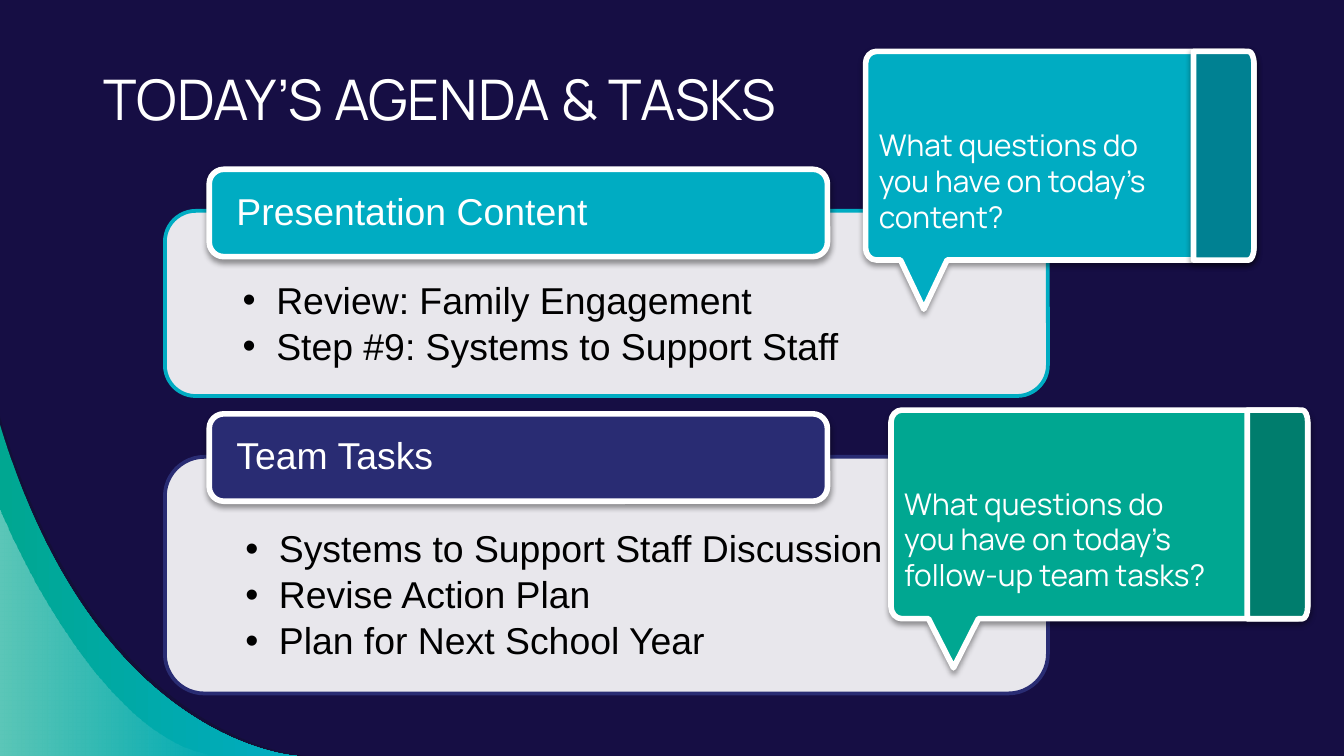
"""Build the agenda slide: two topic cards, two question callouts and a corner swoosh."""
from lxml import etree
from pptx import Presentation
from pptx.dml.color import RGBColor
from pptx.enum.shapes import MSO_SHAPE
from pptx.enum.text import MSO_ANCHOR, MSO_AUTO_SIZE, PP_ALIGN
from pptx.oxml.ns import qn
from pptx.util import Inches, Pt

ROUNDED = MSO_SHAPE.ROUNDED_RECTANGLE
TOP, MIDDLE, LEFT = MSO_ANCHOR.TOP, MSO_ANCHOR.MIDDLE, PP_ALIGN.LEFT
FIXED = MSO_AUTO_SIZE.NONE

NIGHT = RGBColor(0x16, 0x0E, 0x44)
SHADE = RGBColor(0x12, 0x10, 0x2F)
WHITE = RGBColor(0xFF, 0xFF, 0xFF)
BLACK = RGBColor(0, 0, 0)
TEAL = RGBColor(0x00, 0xAC, 0xC2)
DARK_TEAL = RGBColor(0x00, 0x81, 0x92)
GREEN = RGBColor(0x00, 0xA7, 0x91)
DARK_GREEN = RGBColor(0x00, 0x7D, 0x6D)
INDIGO = RGBColor(0x29, 0x2C, 0x73)

# Positions and sizes are percentages of the slide's width and height.
TITLE = "TODAY’S AGENDA & TASKS"
CARDS = [
    {"header": "Presentation Content", "color": TEAL,
     "header_top": 22.4, "top": 27.9, "height": 24.5,
     "items": ["Review: Family Engagement", "Step #9: Systems to Support Staff"]},
    {"header": "Team Tasks", "color": INDIGO,
     "header_top": 54.75, "top": 60.44, "height": 31.3,
     "items": ["Systems to Support Staff Discussion", "Revise Action Plan",
               "Plan for Next School Year"]},
]
CALLOUTS = [
    {"lines": ["What questions do", "you have on today’s content?"],
     "left": 64.4, "top": 6.8, "width": 28.9, "color": TEAL,
     "bar_color": DARK_TEAL, "bar_shadow": True},
    {"lines": ["What questions do", "you have on today’s", "follow-up team tasks?"],
     "left": 66.3, "top": 54.25, "width": 31, "color": GREEN,
     "bar_color": DARK_GREEN, "bar_shadow": False},
]
SWOOSHES = [
    {"start": (0, 55.1), "curve": [(7.3, 98.5), (22.7, 100), (22.7, 100)],
     "stops": [(SHADE, 54)]},
    {"start": (0, 56.2), "curve": [(7.2, 98.7), (22.1, 100), (22.1, 100)],
     "stops": [(GREEN, 100), (TEAL, 100)]},
    {"start": (0, 67.5), "curve": [(0, 67.5), (6.9, 98), (16.2, 100)],
     "stops": [(WHITE, 36), (WHITE, 0)]},
]
CARD_LEFT, CARD_WIDTH = 12.27, 65.7
HEADER_LEFT, HEADER_WIDTH, HEADER_HEIGHT = 15.57, 46, 11.56
CALLOUT_HEIGHT, TAIL_DEPTH, BAR_WIDTH = 27.6, 6.5, 4.5
TAIL_SHARES = (0.21, 0.15, 0.09)
BUBBLE_RADIUS, BAR_RADIUS, RADIUS_DOWN = 0.8, 0.4, 1.6

deck = Presentation()
deck.slide_width = Inches(10)
deck.slide_height = deck.slide_width * 9 // 16
slide = deck.slides.add_slide(deck.slide_layouts[5])
slide.background.fill.solid()
slide.background.fill.fore_color.rgb = NIGHT


def across(share):
    return round(deck.slide_width * share / 100)


def down(share):
    return round(deck.slide_height * share / 100)


def frame(left, top, width, height):
    return across(left), down(top), across(width), down(height)


def outline(start, segments):
    """Draw one-point segments as lines and three-point segments as curves."""
    builder = slide.shapes.build_freeform(across(start[0]), down(start[1]), scale=1.0)
    builder.add_line_segments([(across(x), down(y))
                               for segment in segments for x, y in segment], close=True)
    shape = builder.convert_to_shape()
    steps = iter(list(shape._element.iter(qn("a:lnTo"))))
    for segment in segments:
        first, *others = [next(steps) for _ in segment]
        if others:
            first.tag = qn("a:cubicBezTo")
            for step in others:
                first.append(step[0])
                step.getparent().remove(step)
    return shape


def bend(begin, tip, end):
    """Return the curve that rounds the corner at tip."""
    pulls = [tuple(p + 0.55 * (t - p) for p, t in zip(point, tip))
             for point in (begin, end)]
    return [*pulls, end]


def right_side(right, top, bottom, radius):
    """Return the start and the segments of a right edge with rounded corners."""
    inner, upper, lower = right - radius, top + RADIUS_DOWN, bottom - RADIUS_DOWN
    return (inner, top), [bend((inner, top), (right, top), (right, upper)),
                          [(right, lower)],
                          bend((right, lower), (right, bottom), (inner, bottom))]


def add_alpha(color_element, opacity):
    etree.SubElement(color_element, qn("a:alpha"), val=str(opacity * 1000))


def paint(shape, stops, line=None, line_width=3, shadow=False):
    shape.shadow.inherit = False
    if len(stops) == 1:
        shape.fill.solid()
        shape.fill.fore_color.rgb = stops[0][0]
    else:
        shape.fill.gradient()
        shape.fill.gradient_angle = 0
        for stop, (color, _) in zip(shape.fill.gradient_stops, stops):
            stop.color.rgb = color
    properties = shape._element.spPr
    for color_element, (_, opacity) in zip(properties.iter(qn("a:srgbClr")), stops):
        if opacity < 100:
            add_alpha(color_element, opacity)
    if line is None:
        shape.line.fill.background()
    else:
        shape.line.color.rgb = line
        shape.line.width = Pt(line_width)
    if shadow:
        effect = etree.SubElement(properties.find(qn("a:effectLst")), qn("a:outerShdw"),
                                  blurRad=str(Pt(3.1)), dist=str(Pt(1.6)),
                                  dir="5400000", rotWithShape="0")
        add_alpha(etree.SubElement(effect, qn("a:srgbClr"), val=str(BLACK)), 38)


def add_bullet(paragraph):
    paragraph.level = 1
    properties = paragraph._p.get_or_add_pPr()
    properties.set("marL", str(Inches(0.25)))
    properties.set("indent", str(-Inches(0.25)))
    color = etree.SubElement(properties, qn("a:buClr"))
    etree.SubElement(color, qn("a:srgbClr"), val=str(BLACK))
    etree.SubElement(properties, qn("a:buFont"), typeface="Arial")
    etree.SubElement(properties, qn("a:buChar"), char="•")


def write(shape, lines, size, font, color, insets=(0.1, 0.1, 0.1, 0.1),
          anchor=MIDDLE, spacing=1.0, after=0, bullets=False):
    text = shape.text_frame
    text.word_wrap, text.auto_size, text.vertical_anchor = True, FIXED, anchor
    text.margin_left, text.margin_top, text.margin_right, text.margin_bottom = map(
        Inches, insets)
    for index, line in enumerate(lines):
        paragraph = text.add_paragraph() if index else text.paragraphs[0]
        if bullets:
            add_bullet(paragraph)
        paragraph.alignment = LEFT
        paragraph.line_spacing = spacing
        paragraph.space_after = Pt(after)
        run = paragraph.add_run()
        run.text = line
        run.font.size, run.font.name = Pt(size), font
        run.font.color.rgb = color


def add_panel(box, fill, opacity, line, line_width, shadow, lines, **style):
    left, top, width, height = frame(*box)
    panel = slide.shapes.add_shape(ROUNDED, left, top, width, height)
    paint(panel, [(fill, opacity)], line, line_width, shadow)
    inset = round(height * 0.05)
    label = slide.shapes.add_textbox(left + inset, top + inset,
                                     width - 2 * inset, height - 2 * inset)
    write(label, lines, 20, "Arial", spacing=0.9, **style)


def add_card(card):
    add_panel((CARD_LEFT, card["top"], CARD_WIDTH, card["height"]),
              WHITE, 90, card["color"], 2, False, card["items"], color=BLACK,
              insets=(0.51, 0.46, 0.51, 0.16), anchor=TOP, after=3, bullets=True)
    add_panel((HEADER_LEFT, card["header_top"], HEADER_WIDTH, HEADER_HEIGHT),
              card["color"], 100, WHITE, 3, True, [card["header"]], color=WHITE,
              insets=(0.17, 0, 0.17, 0))


def add_callout(callout):
    left, top, width = callout["left"], callout["top"], callout["width"]
    right, bottom = left + width, top + CALLOUT_HEIGHT
    inner, upper, lower = left + BUBBLE_RADIUS, top + RADIUS_DOWN, bottom - RADIUS_DOWN
    tail = [[(left + width * share, bottom + depth)]
            for share, depth in zip(TAIL_SHARES, (0, TAIL_DEPTH, 0))]
    start, edge = right_side(right, top, bottom, BUBBLE_RADIUS)
    bubble = outline(start, [*edge, *tail, [(inner, bottom)],
                             bend((inner, bottom), (left, bottom), (left, lower)),
                             [(left, upper)],
                             bend((left, upper), (left, top), (inner, top))])
    paint(bubble, [(callout["color"], 100)], WHITE, shadow=True)
    write(bubble, callout["lines"], 16, "Manrope", WHITE)
    start, edge = right_side(right, top, bottom, BAR_RADIUS)
    bar = outline(start, [*edge, [(right - BAR_WIDTH, bottom)], [(right - BAR_WIDTH, top)]])
    paint(bar, [(callout["bar_color"], 100)], WHITE, shadow=callout["bar_shadow"])


for swoosh in SWOOSHES:
    paint(outline(swoosh["start"], [swoosh["curve"], [(0, 100)]]), swoosh["stops"])
title = slide.shapes.title
title.left, title.top, title.width, title.height = frame(6.7, 6.76, 76.9, 12.27)
write(title, [TITLE], 30, "Manrope", WHITE, anchor=TOP)
for agenda_card in CARDS:
    add_card(agenda_card)
for question in CALLOUTS:
    add_callout(question)
deck.save("out.pptx")
